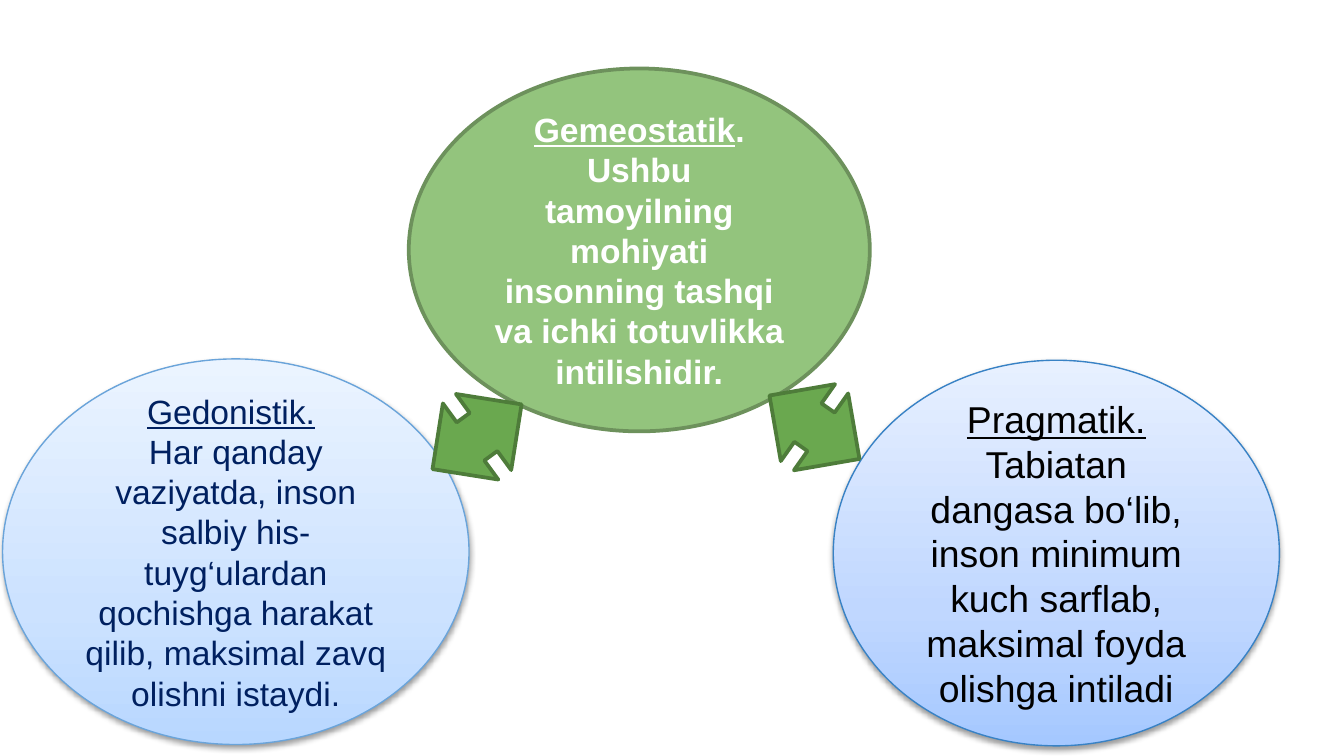
from lxml import etree
from pptx import Presentation
from pptx.dml.color import RGBColor
from pptx.enum.shapes import MSO_SHAPE as Shape
from pptx.enum.text import MSO_ANCHOR as Anchor, PP_ALIGN as Align
from pptx.oxml.ns import qn
from pptx.util import Pt


def rgb(hex_colour):
    return RGBColor.from_string(hex_colour)


def add_outlined(slide, preset, box, line_colour, line_width):
    """Add a shadowless preset shape in box (left, top, width, height)."""
    shape = slide.shapes.add_shape(preset, *(Pt(v) for v in box))
    shape.shadow.inherit = False
    shape.line.color.rgb = rgb(line_colour)
    shape.line.width = Pt(line_width)
    return shape


def add_colour(parent, hex_colour):
    return etree.SubElement(parent, qn("a:srgbClr"), val=hex_colour)


def fill_upward(shape, colours):
    """Blend three colours from the bottom of the shape to its top."""
    shape.fill.gradient()
    shape.fill.gradient_angle = 90
    stops = shape._element.spPr.find(".//" + qn("a:gsLst"))
    stops.clear()
    for percent, colour in zip((0, 35, 100), colours):
        stop = etree.SubElement(stops, qn("a:gs"), pos=str(percent * 1000))
        add_colour(stop, colour)


def drop_shadow(shape):
    effects = shape._element.spPr.find(qn("a:effectLst"))
    shadow = etree.SubElement(
        effects, qn("a:outerShdw"), blurRad=str(Pt(3.1)), dist=str(Pt(1.6)),
        dir="5400000", rotWithShape="0")
    etree.SubElement(add_colour(shadow, "000000"), qn("a:alpha"), val="38000")


def write_principle(oval, paragraphs, size, colour, bold=False):
    """Write paragraphs of runs, underlining the very first run (the name)."""
    frame = oval.text_frame
    frame.word_wrap = True
    frame.vertical_anchor = Anchor.MIDDLE
    for number, texts in enumerate(paragraphs):
        paragraph = frame.add_paragraph() if number else frame.paragraphs[0]
        paragraph.alignment = Align.CENTER
        for position, text in enumerate(texts):
            run = paragraph.add_run()
            run.text = text
            font = run.font
            font.name, font.size, font.bold = "Arial", Pt(size), bold
            font.color.rgb = rgb(colour)
            font.underline = number == position == 0


def add_main_principle(slide, box, paragraphs):
    oval = add_outlined(slide, Shape.OVAL, box, "6D915C", 2)
    oval.fill.solid()
    oval.fill.fore_color.rgb = rgb("93C47D")
    write_principle(oval, paragraphs, 18, "FFFFFF", bold=True)


def add_side_principle(slide, box, paragraphs, blues, outline, size, colour):
    oval = add_outlined(slide, Shape.OVAL, box, outline, 0.75)
    fill_upward(oval, blues)
    drop_shadow(oval)
    write_principle(oval, paragraphs, size, colour)


def add_link(slide, left, top, rotation):
    arrow = add_outlined(slide, Shape.UP_DOWN_ARROW, (left, top, 50.4, 59),
                         "4E7C3A", 2)
    arrow.fill.solid()
    arrow.fill.fore_color.rgb = rgb("6AA84F")
    arrow.rotation = rotation


def main():
    deck = Presentation()
    deck.slide_width, deck.slide_height = Pt(720), Pt(405)
    slide = deck.slides.add_slide(deck.slide_layouts[6])

    add_main_principle(
        slide, (219, 36.7, 247, 194.4),
        [["Gemeostatik", ". Ushbu tamoyilning mohiyati insonning tashqi "
          "va ichki totuvlikka intilishidir."]])
    add_side_principle(
        slide, (1.4, 192.3, 249.9, 206.6),
        [["Gedonistik.", " "],
         ["Har qanday vaziyatda, inson salbiy his-tuyg‘ulardan qochishga "
          "harakat qilib, maksimal zavq olishni istaydi."]],
        ("B8D7FF", "CCE2FF", "EBF4FF"), "6AA4DA", 18, "002060")
    add_side_principle(
        slide, (446.4, 193, 239, 206.6),
        [["Pragmatik. ", "Tabiatan dangasa bo‘lib, inson minimum kuch "
          "sarflab, maksimal foyda olishga intiladi"]],
        ("A5C8FF", "C0D7FF", "E7F0FF"), "3882C5", 20, "000000")

    add_link(slide, 230.4, 204.5, 54)
    add_link(slide, 411.1, 199.4, 125.2)
    deck.save("out.pptx")


if __name__ == "__main__":
    main()
